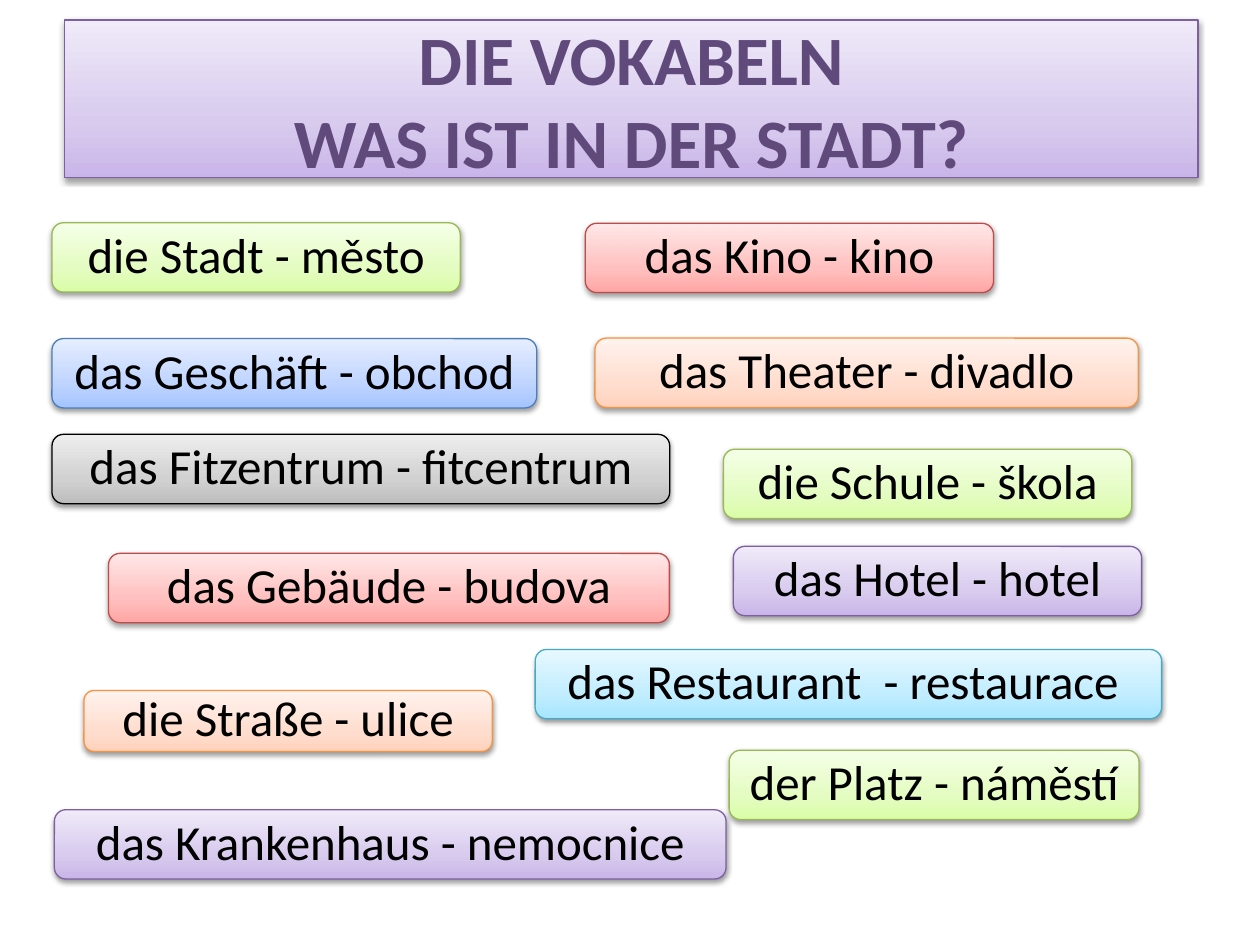
from pptx import Presentation
from pptx.dml.color import RGBColor
from pptx.enum.shapes import MSO_SHAPE
from pptx.enum.text import MSO_ANCHOR, PP_ALIGN
from pptx.oxml import parse_xml
from pptx.oxml.ns import nsdecls
from pptx.util import Pt
from copy import deepcopy

# Content: text, theme, left, top, width in points
TITLE = "DIE VOKABELN\vWAS IST IN DER STADT?"
CARD_HEIGHT = 39.6
LOW_HEIGHT = 34.8
CARD_WIDTH = 233.3
CARDS = [
    ("die Stadt - město", "green", 29.7, 127.3, CARD_WIDTH, CARD_HEIGHT),
    ("das Kino - kino", "red", 334.5, 127.6, CARD_WIDTH, CARD_HEIGHT),
    ("das Theater - divadlo", "orange", 340, 193.2, 310.5, CARD_HEIGHT),
    ("das Restaurant  - restaurace ", "aqua", 305.8, 371.1, 358, CARD_HEIGHT),
    ("das Geschäft - obchod", "blue", 29.7, 193.5, 277, CARD_HEIGHT),
    ("das Fitzentrum - fitcentrum", "gray", 29.7, 248.2, 353, CARD_HEIGHT),
    ("das Gebäude - budova", "red", 62, 316.2, 320.5, CARD_HEIGHT),
    ("die Schule - škola", "green", 413.4, 256.7, CARD_WIDTH, CARD_HEIGHT),
    ("die Straße - ulice", "orange", 48, 394.6, CARD_WIDTH, LOW_HEIGHT),
    ("das Hotel - hotel", "purple", 419.1, 312.2, CARD_WIDTH, CARD_HEIGHT),
    ("der Platz - náměstí", "green", 416.7, 428.7, 234.2, CARD_HEIGHT),
    ("das Krankenhaus - nemocnice", "purple", 31.1, 462.7, 383.8, CARD_HEIGHT),
]

# Colours: bottom, middle and top of the gradient, then the outline
THEMES = {
    "green": ("DAFDA7", "E4FCC2", "F5FFE7", "98B955"),
    "red": ("FFA6A5", "FFC0BF", "FFE7E7", "BF4C48"),
    "orange": ("FFD2BD", "FFDED0", "FFF2ED", "F69240"),
    "aqua": ("A7E6FF", "C1EDFF", "E7F8FF", "46AAC5"),
    "blue": ("A4C4FF", "BFD4FF", "E6EEFF", "4B7EBC"),
    "gray": ("BDBDBD", "D1D1D1", "EEEEEE", "000000"),
    "purple": ("C9B5E8", "D8CBEE", "F0EAF9", "7D60A0"),
}
TEXT_COLORS = {"title": "604A7B", "card": "000000"}
STOP_POSITIONS = (0, 0.35, 1)


def apply_theme(shape, theme):
    *gradient, outline = THEMES[theme]
    shape.fill.gradient()
    shape.fill.gradient_angle = 90
    stop_list = shape._element.spPr.xpath(".//a:gsLst")[0]
    stop_list.append(deepcopy(stop_list[-1]))
    for stop, position, color in zip(shape.fill.gradient_stops, STOP_POSITIONS, gradient):
        stop.position = position
        stop.color.rgb = RGBColor.from_string(color)
    shape.line.color.rgb = RGBColor.from_string(outline)
    shape.line.width = Pt(0.75)

    # Soft shadow below the shape
    shape.shadow.inherit = False
    shape._element.spPr.xpath("a:effectLst")[0].append(parse_xml(
        f'<a:outerShdw {nsdecls("a")} blurRad="{Pt(3.1)}" dist="{Pt(1.6)}" '
        'dir="5400000" rotWithShape="0"><a:srgbClr val="000000">'
        '<a:alpha val="38000"/></a:srgbClr></a:outerShdw>'))


def add_panel(slide, kind, theme, box, text, size, color):
    shape = slide.shapes.add_shape(kind, *(Pt(value) for value in box))
    apply_theme(shape, theme)
    frame = shape.text_frame
    frame.word_wrap = True
    frame.vertical_anchor = MSO_ANCHOR.MIDDLE
    frame.text = text
    paragraph = frame.paragraphs[0]
    paragraph.alignment = PP_ALIGN.CENTER
    paragraph.font.name = "Calibri"
    paragraph.font.size = Pt(size)
    paragraph.font.color.rgb = RGBColor.from_string(color)
    return frame


def main():
    presentation = Presentation()
    presentation.slide_width, presentation.slide_height = Pt(720), Pt(540)
    slide = presentation.slides.add_slide(presentation.slide_layouts[6])

    # Title banner
    frame = add_panel(slide, MSO_SHAPE.RECTANGLE, "purple", (36.7, 11.5, 648, 90),
                      TITLE, 39.6, TEXT_COLORS["title"])
    frame.paragraphs[0].font.bold = True

    # Vocabulary cards
    for text, theme, *box in CARDS:
        frame = add_panel(slide, MSO_SHAPE.ROUNDED_RECTANGLE, theme, box,
                          text, 28, TEXT_COLORS["card"])
        frame.margin_left = frame.margin_right = Pt(8.6)
        frame.margin_top = frame.margin_bottom = Pt(4.3)
        frame.paragraphs[0].line_spacing = 0.9

    presentation.save("out.pptx")


if __name__ == "__main__":
    main()
